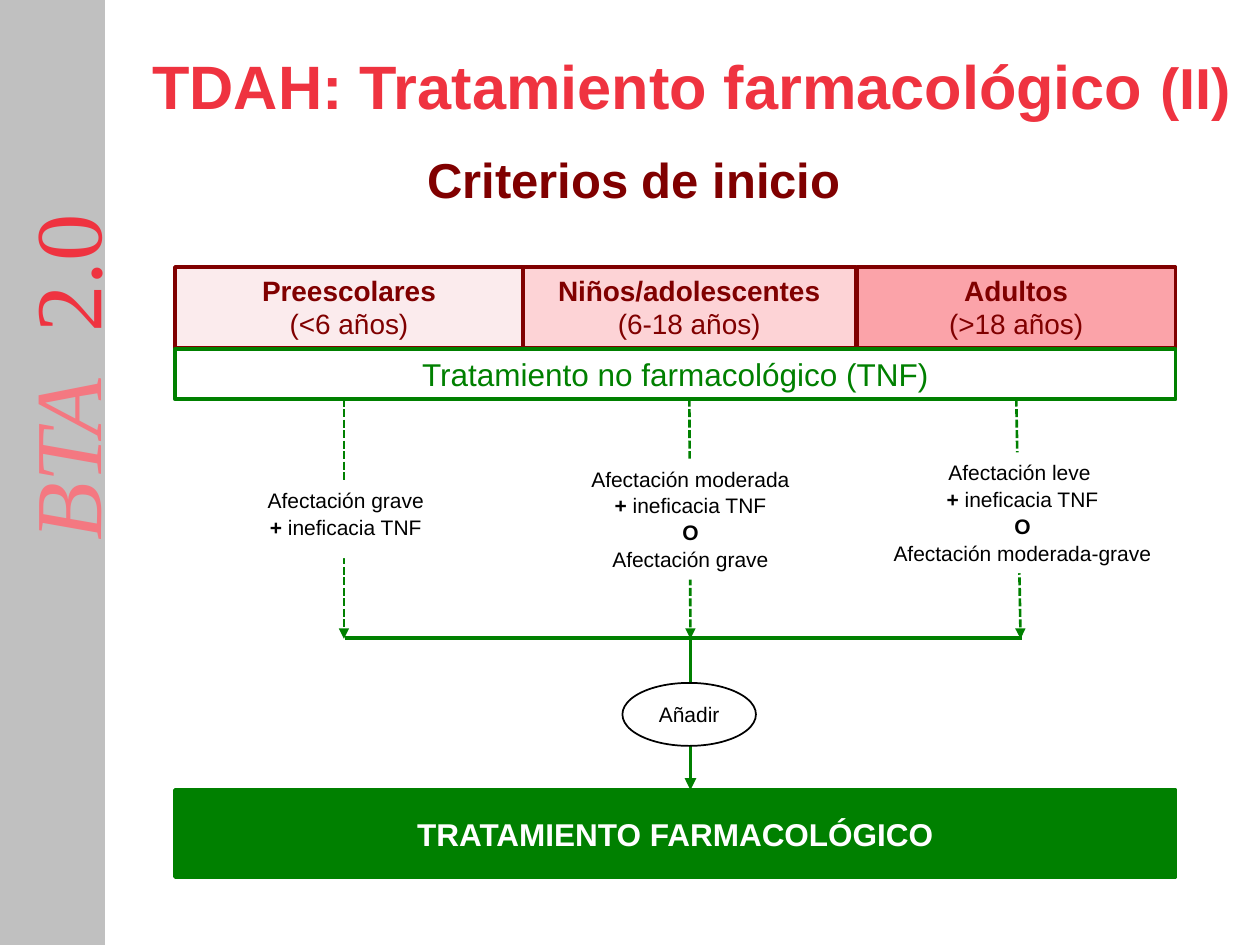
from typing import NamedTuple, Optional

from lxml.etree import SubElement
from pptx import Presentation
from pptx.dml.color import RGBColor
from pptx.enum.dml import MSO_LINE
from pptx.enum.shapes import MSO_CONNECTOR, MSO_SHAPE
from pptx.enum.text import MSO_ANCHOR, PP_ALIGN
from pptx.oxml.ns import qn
from pptx.util import Inches, Pt

RED = RGBColor(0xEF, 0x33, 0x40)
PINK = RGBColor(0xF4, 0x78, 0x81)
MAROON = RGBColor(0x80, 0x00, 0x00)
GREEN = RGBColor(0x00, 0x80, 0x00)
GREY = RGBColor(0xC0, 0xC0, 0xC0)
WHITE = RGBColor(0xFF, 0xFF, 0xFF)
BLACK = RGBColor(0x00, 0x00, 0x00)

LEFT, WIDTH = 1.39, 7.94  # span shared by the full-width bars
JOIN_Y = 5.06  # where the three branches meet


class Run(NamedTuple):
    text: str
    bold: bool = False


class Box(NamedTuple):
    left: float
    top: float
    width: float
    height: float


class AgeGroup(NamedTuple):
    name: str
    ages: str
    header: Box
    tint: RGBColor
    arrow_x: tuple[float, float]
    criteria_box: Box
    criteria: list[list[Run]]
    spacing: float


PLUS = Run("+", True)
TNF_FAILS = Run(" ineficacia TNF")
OR = [Run("O", True)]

AGE_GROUPS = [
    AgeGroup("Preescolares", "(<6 años)", Box(LEFT, 2.12, 2.76, 0.64),
             RGBColor(0xFB, 0xEB, 0xED), (2.73, 2.73), Box(1.98, 3.81, 1.53, 0.62),
             [[Run("Afectación grave")], [PLUS, TNF_FAILS]], 1.07),
    AgeGroup("Niños/adolescentes", "(6-18 años)", Box(4.15, 2.12, 2.64, 0.64),
             RGBColor(0xFD, 0xD3, 0xD6), (5.47, 5.48), Box(4.57, 3.64, 1.82, 0.96),
             [[Run("Afectación moderada "), PLUS, TNF_FAILS], OR,
              [Run("Afectación grave")]], 1.06),
    AgeGroup("Adultos", "(>18 años)", Box(6.8, 2.12, 2.53, 0.64),
             RGBColor(0xFB, 0xA3, 0xA9), (8.06, 8.1), Box(6.97, 3.59, 2.29, 0.96),
             [[Run("Afectación leve ")], [PLUS, TNF_FAILS], OR,
              [Run("Afectación moderada-grave")]], 1.06),
]


def write(shape, lines: list[list[Run]], size: float, color: RGBColor,
          anchor=MSO_ANCHOR.MIDDLE, spacing: Optional[float] = None) -> None:
    """Fill a shape with centred Arial paragraphs."""
    frame = shape.text_frame
    frame.word_wrap = True
    frame.vertical_anchor = anchor
    for index, runs in enumerate(lines):
        paragraph = frame.paragraphs[0] if index == 0 else frame.add_paragraph()
        paragraph.alignment = PP_ALIGN.CENTER
        paragraph.line_spacing = spacing
        paragraph.font.name = "Arial"
        paragraph.font.size = Pt(size)
        paragraph.font.color.rgb = color
        for text, bold in runs:
            run = paragraph.add_run()
            run.text = text
            run.font.bold = bold


def add_box(slide, box: Box, fill: RGBColor, line: Optional[RGBColor] = None,
            weight: float = 2.25, kind=MSO_SHAPE.RECTANGLE):
    shape = slide.shapes.add_shape(kind, *map(Inches, box))
    shape.shadow.inherit = False
    shape.fill.solid()
    shape.fill.fore_color.rgb = fill
    if line is None:
        shape.line.fill.background()
    else:
        shape.line.color.rgb = line
        shape.line.width = Pt(weight)
    return shape


def add_text(slide, box: Box):
    return slide.shapes.add_textbox(*map(Inches, box))


def add_line(slide, start: tuple[float, float], end: tuple[float, float],
             weight: float = 2.25, dashed: bool = False, arrow: bool = True) -> None:
    connector = slide.shapes.add_connector(
        MSO_CONNECTOR.STRAIGHT, *map(Inches, (*start, *end)))
    connector.line.color.rgb = GREEN
    connector.line.width = Pt(weight)
    if dashed:
        connector.line.dash_style = MSO_LINE.SQUARE_DOT
    properties = connector.element.spPr
    if arrow:
        SubElement(properties.find(qn("a:ln")), qn("a:tailEnd"), type="triangle")
    SubElement(properties, qn("a:effectLst"))


def add_sidebar(slide) -> None:
    add_box(slide, Box(0, 0, 0.83, 7.5), GREY, GREY, 0.75)
    label = add_text(slide, Box(-1.11, 2.27, 3.23, 1))
    label.rotation = 270
    frame = label.text_frame
    frame.word_wrap = True
    frame.vertical_anchor = MSO_ANCHOR.BOTTOM
    paragraph = frame.paragraphs[0]
    # A tab stop sets the gap between the name and the version
    tabs = SubElement(paragraph._p.get_or_add_pPr(), qn("a:tabLst"))
    SubElement(tabs, qn("a:tab"), pos=str(Inches(1.65)), algn="l")
    paragraph.font.name = "Times New Roman"
    paragraph.font.size = Pt(54)
    for text, color, italic in (("BTA\t", PINK, True), ("2.0", RED, False)):
        run = paragraph.add_run()
        run.text = text
        run.font.color.rgb = color
        run.font.italic = italic


def add_headings(slide) -> None:
    title = add_text(slide, Box(0.98, 0.28, 9.02, 0.79))
    write(title, [[Run("TDAH: Tratamiento farmacológico ", True), Run("(II)", True)]],
          35, RED)
    title.text_frame.paragraphs[0].runs[1].font.size = Pt(33)
    subtitle = add_text(slide, Box(3.27, 1.14, 3.52, 0.57))
    write(subtitle, [[Run("Criterios de inicio", True)]], 28, MAROON, MSO_ANCHOR.TOP)


def add_age_group(slide, group: AgeGroup) -> None:
    header = add_box(slide, group.header, group.tint, MAROON)
    write(header, [[Run(group.name, True)], [Run(group.ages)]], 16, MAROON,
          MSO_ANCHOR.TOP)
    start_x, end_x = group.arrow_x
    add_line(slide, (start_x, 2.83), (end_x, 5.07), 1.5, dashed=True)
    criteria = add_box(slide, group.criteria_box, WHITE)
    write(criteria, group.criteria, 12, BLACK, MSO_ANCHOR.TOP, group.spacing)


def main() -> None:
    prs = Presentation()
    prs.slide_width, prs.slide_height = Inches(10), Inches(7.5)
    slide = prs.slides.add_slide(prs.slide_layouts[6])

    add_sidebar(slide)
    add_headings(slide)

    # Criteria by age group
    for group in AGE_GROUPS:
        add_age_group(slide, group)
    non_drug = add_box(slide, Box(LEFT, 2.77, WIDTH, 0.4), WHITE, GREEN)
    write(non_drug, [[Run("Tratamiento no farmacológico (TNF)")]], 18, GREEN)

    # Branches join and lead to drug treatment
    add_line(slide, (2.74, JOIN_Y), (8.11, JOIN_Y), arrow=False)
    add_line(slide, (5.48, 5.08), (5.48, 6.27))
    add_step = add_box(slide, Box(4.94, 5.42, 1.06, 0.5), WHITE, BLACK, 1,
                       MSO_SHAPE.OVAL)
    write(add_step, [[Run("Añadir")]], 12, BLACK)
    drug = add_box(slide, Box(LEFT, 6.27, WIDTH, 0.69), GREEN, GREEN)
    write(drug, [[Run("TRATAMIENTO FARMACOLÓGICO", True)]], 18, WHITE)

    prs.save("out.pptx")


if __name__ == "__main__":
    main()
